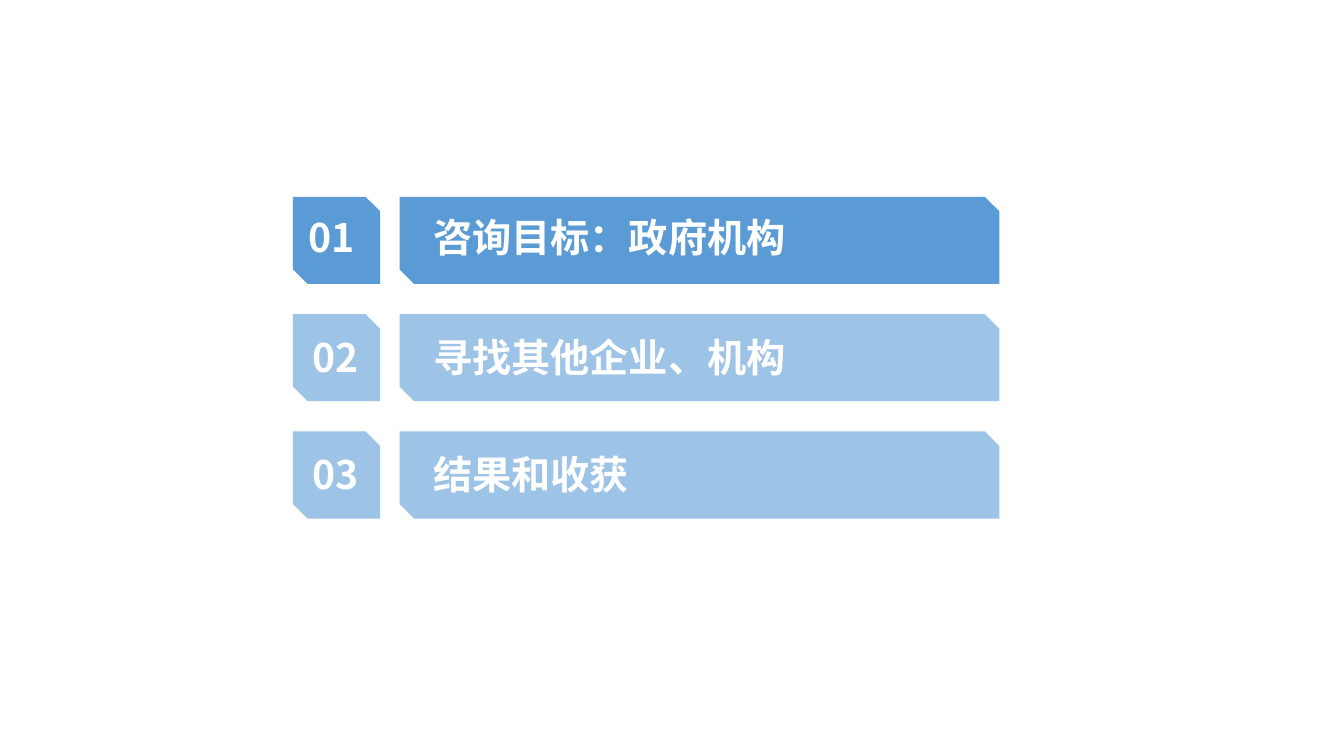
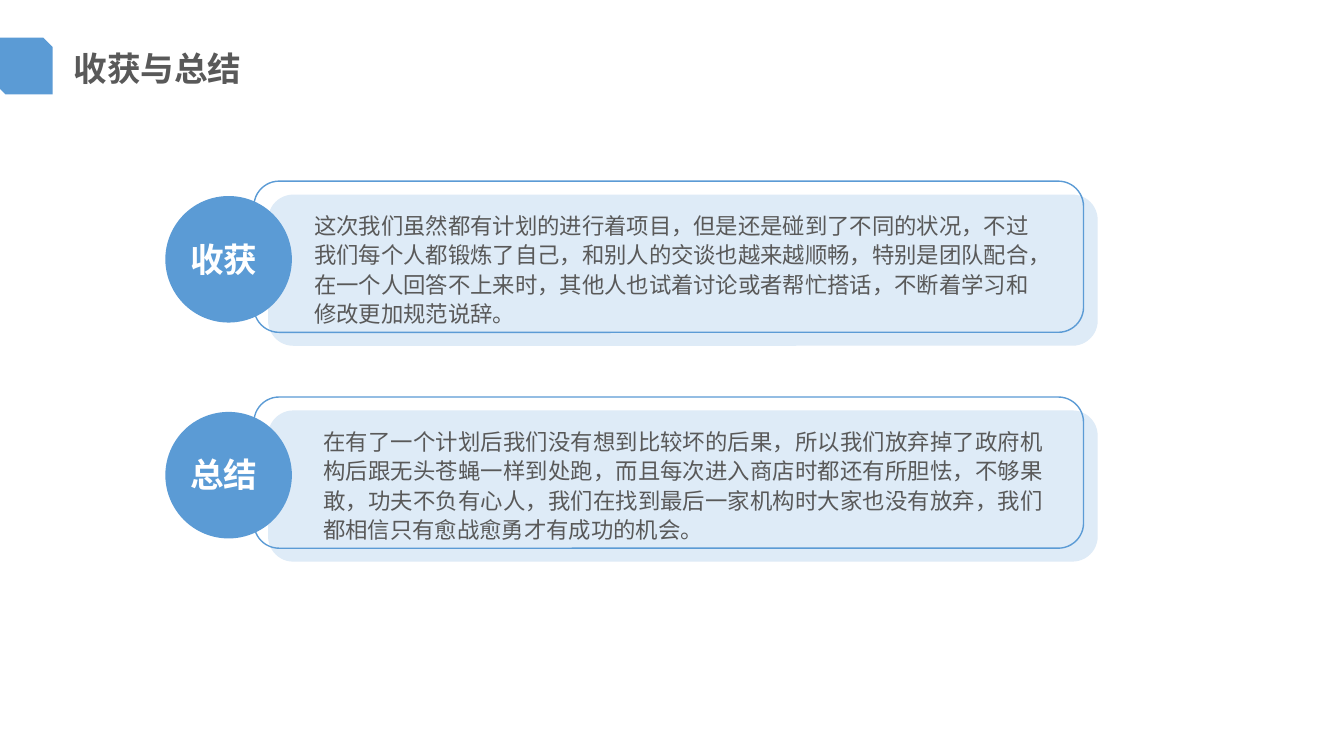
from lxml import etree
from pptx import Presentation
from pptx.dml.color import RGBColor
from pptx.enum.shapes import MSO_SHAPE
from pptx.enum.text import MSO_AUTO_SIZE, PP_ALIGN
from pptx.oxml.ns import qn
from pptx.util import Pt

BLUE = RGBColor(0x5B, 0x9B, 0xD5)
SOFT_BLUE = RGBColor(0x9D, 0xC3, 0xE6)
PALE_BLUE = RGBColor(0xDE, 0xEB, 0xF7)
GREY = RGBColor(0x59, 0x59, 0x59)
WHITE = RGBColor(0xFF, 0xFF, 0xFF)

SNIPPED = MSO_SHAPE.SNIP_2_DIAG_RECTANGLE
ROUNDED = MSO_SHAPE.ROUNDED_RECTANGLE
CIRCLE = MSO_SHAPE.OVAL
GROW = MSO_AUTO_SIZE.SHAPE_TO_FIT_TEXT
JUSTIFY = PP_ALIGN.JUSTIFY

FONT = "Noto Sans CJK SC"
AGENDA_FONT = {"name": FONT, "size": Pt(28), "bold": True}
HEADING_FONT = {"name": FONT, "size": Pt(24), "bold": True}
BODY_FONT = {"name": FONT, "size": Pt(16), "bold": False}
BODY_PARAGRAPH = {"alignment": JUSTIFY, "line_spacing": 1.1}

AGENDA = [
    ("01", "咨询目标：政府机构", BLUE, 213.1, 8.6, 266.4),
    ("02", "寻找其他企业、机构", SOFT_BLUE, 216, 10.2, 266.4),
    ("03", "结果和收获", SOFT_BLUE, 216, 10.2, 154.1),
]
REFLECTIONS = [
    ("收获", "这次我们虽然都有计划的进行着项目，但是还是碰到了不同的状况，"
     "不过我们每个人都锻炼了自己，和别人的交谈也越来越顺畅，特别是团队配合，"
     "在一个人回答不上来时，其他人也试着讨论或者帮忙搭话，"
     "不断着学习和修改更加规范说辞。", 217.4, 524.9),
    ("总结", "在有了一个计划后我们没有想到比较坏的后果，"
     "所以我们放弃掉了政府机构后跟无头苍蝇一样到处跑，"
     "而且每次进入商店时都还有所胆怯，不够果敢，功夫不负有心人，"
     "我们在找到最后一家机构时大家也没有放弃，"
     "我们都相信只有愈战愈勇才有成功的机会。", 223.9, 528.5),
]


def apply(target, values):
    for attribute, value in values.items():
        setattr(target, attribute, value)


class Deck:
    def __init__(self):
        self.presentation = Presentation()
        apply(self.presentation, {"slide_width": Pt(960), "slide_height": Pt(540)})
        self.slide = None

    def new_slide(self):
        blank = self.presentation.slide_layouts[6]
        self.slide = self.presentation.slides.add_slide(blank)

    def shape(self, preset, left, top, width, height, fill=None, outline=None):
        shape = self.slide.shapes.add_shape(
            preset, Pt(left), Pt(top), Pt(width), Pt(height))
        shape.shadow.inherit = False
        if fill is None:
            shape.fill.background()
        else:
            shape.fill.solid()
            shape.fill.fore_color.rgb = fill
        if outline is None:
            shape.line.fill.background()
        else:
            shape.line.color.rgb = outline
            shape.line.width = Pt(1)

    def text(self, words, left, top, width, height, font, color,
             wrap=False, paragraph_format=None):
        box = self.slide.shapes.add_textbox(
            Pt(left), Pt(top), Pt(width), Pt(height))
        apply(box.text_frame, {"word_wrap": wrap, "auto_size": GROW})
        paragraph = box.text_frame.paragraphs[0]
        apply(paragraph, paragraph_format or {})
        run = paragraph.add_run()
        run.text = words
        apply(run.font, font)
        run.font.color.rgb = color
        properties = run._r.get_or_add_rPr()
        etree.SubElement(properties, qn("a:ea"), typeface=font["name"])

    def title(self, words):
        self.shape(SNIPPED, -2.9, 26.9, 40.5, 40.5, BLUE)
        self.text(words, 45.4, 31, 134.6, 36, HEADING_FONT, GREY)

    def agenda_row(self, top, number, topic, fill, number_left, text_drop, topic_width):
        side = 62.2
        self.shape(SNIPPED, 209.3, top, side, side, fill)
        self.shape(SNIPPED, 285.4, top, 428.4, side, fill)
        text_top = top + text_drop
        self.text(number, number_left, text_top, 49, 41, AGENDA_FONT, WHITE)
        self.text(topic, 302.4, text_top, topic_width, 41, AGENDA_FONT, WHITE)

    def reflection(self, top, label, body, body_left, body_width):
        panel_width, panel_height = 592.6, 108
        self.shape(ROUNDED, 191.5, top + 9.6, panel_width, panel_height, PALE_BLUE)
        self.shape(CIRCLE, 118.1, top + 10.6, 90.4, 90.4, BLUE)
        self.shape(ROUNDED, 181.4, top, panel_width, panel_height, outline=BLUE)
        self.text(label, 128.9, top + 37.4, 79.2, 36, HEADING_FONT, WHITE, True)
        self.text(body, body_left, top + 16.6, body_width, 92.2,
                  BODY_FONT, GREY, True, BODY_PARAGRAPH)


def main():
    deck = Deck()

    deck.new_slide()
    for index, row in enumerate(AGENDA):
        deck.agenda_row(140.6 + index * 83.8, *row)

    deck.new_slide()
    deck.title("收获与总结")
    for index, reflection in enumerate(REFLECTIONS):
        deck.reflection(129.4 + index * 154.2, *reflection)

    deck.presentation.save("out.pptx")


if __name__ == "__main__":
    main()
